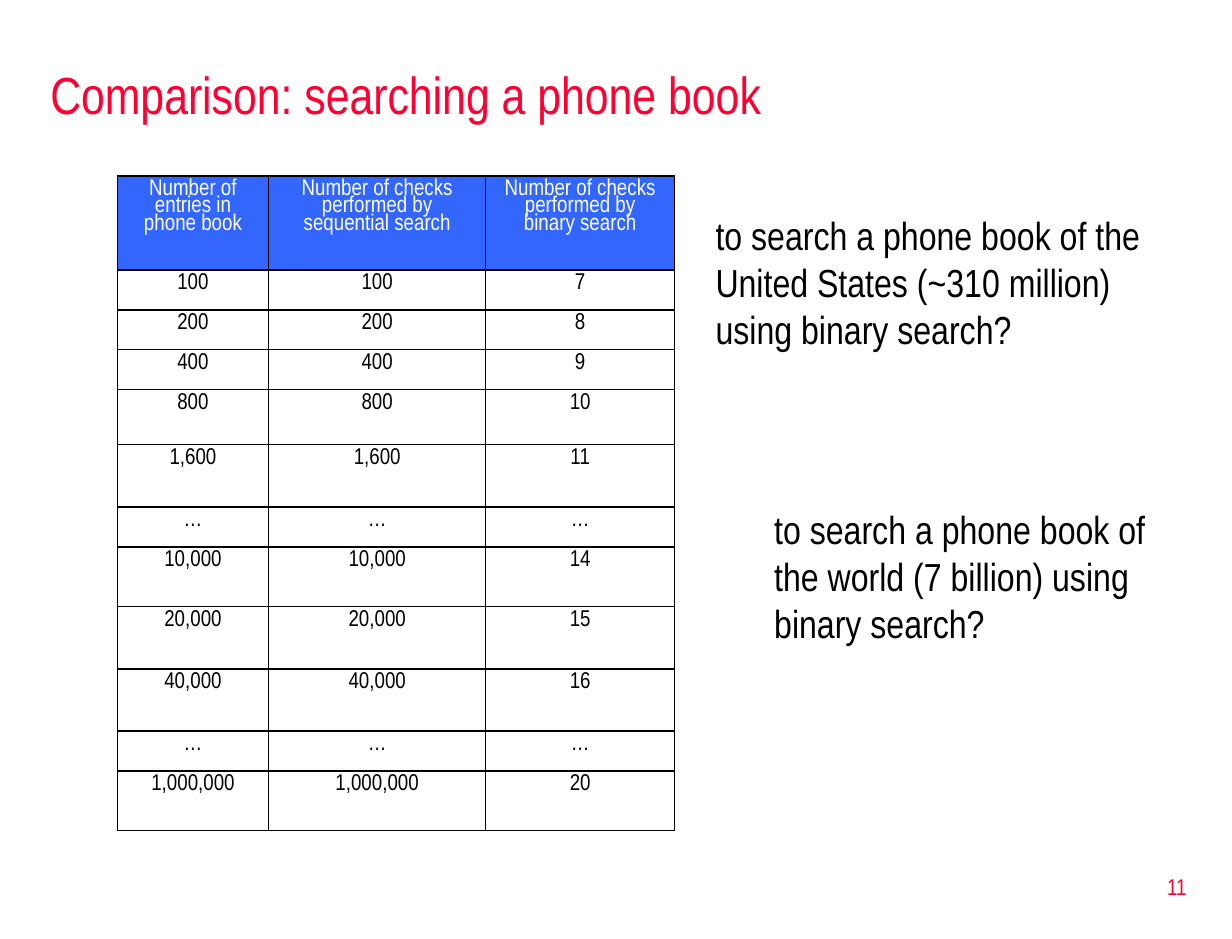
from dataclasses import dataclass
from itertools import product

from lxml.etree import SubElement
from pptx import Presentation
from pptx.dml.color import RGBColor as RGB
from pptx.enum.text import MSO_ANCHOR as Anchor, PP_ALIGN as Align
from pptx.oxml.ns import qn
from pptx.util import Inches, Pt

COLS, ROWS = 42, 32  # grid over the whole slide


@dataclass(frozen=True)
class Theme:
    font: str = "Arial Narrow"
    ink: str = "000000"
    paper: str = "FFFFFF"
    accent: str = "FF0033"
    head: str = "3366FF"
    title: int = 32
    body: int = 24
    small: int = 14
    rule: int = 1


class Deck:
    """Holds the theme and the current slide; lengths are grid columns and rows."""

    def __init__(self, theme):
        self.theme = theme
        self.prs = Presentation()
        self.prs.slide_width, self.prs.slide_height = Inches(10.5), Inches(8)
        self.slide = self.prs.slides.add_slide(self.prs.slide_layouts[6])

    def x(self, cols):
        return round(self.prs.slide_width * cols / COLS)

    def y(self, rows):
        return round(self.prs.slide_height * rows / ROWS)

    def area(self, left, top, width, height):
        return self.x(left), self.y(top), self.x(width), self.y(height)

    def label(self, para, words, size, color, **form):
        run = para.add_run()
        run.text = words
        font = {"name": self.theme.font, "size": Pt(size), "bold": False}
        for key, value in font.items():
            setattr(run.font, key, value)
        run.font.color.rgb = RGB.from_string(color)
        for key, value in form.items():
            setattr(para, key, value)

    def text(self, area, words, size, color, anchor=Anchor.MIDDLE, **form):
        frame = self.slide.shapes.add_textbox(*self.area(*area)).text_frame
        frame.word_wrap = True
        frame.vertical_anchor = anchor
        self.label(frame.paragraphs[0], words, size, color, **form)
        return frame

    def indent(self, para, cols):
        para._p.get_or_add_pPr().set("marL", str(self.x(cols)))

    def border(self, cell):
        props = cell._tc.get_or_add_tcPr()
        for place, side in enumerate(("lnL", "lnR", "lnT", "lnB")):
            line = SubElement(props, qn(f"a:{side}"), w=str(Pt(self.theme.rule)))
            fill = SubElement(line, qn("a:solidFill"))
            SubElement(fill, qn("a:srgbClr"), val=self.theme.ink)
            props.insert(place, line)  # borders come before the cell fill

    def table(self, left, top, widths, heights, data):
        look = self.theme
        area = self.area(left, top, sum(widths), sum(heights))
        table = self.slide.shapes.add_table(len(data), len(widths), *area).table
        table.first_row = table.horz_banding = False
        for col, width in zip(table.columns, widths):
            col.width = self.x(width)
        for row, height in zip(table.rows, heights):
            row.height = self.y(height)
        for r, c in product(range(len(data)), range(len(widths))):
            cell = table.cell(r, c)
            if r == 0:
                cell.fill.solid()
                cell.fill.fore_color.rgb = RGB.from_string(look.head)
            else:
                cell.fill.background()
            self.border(cell)
            self.label(cell.text_frame.paragraphs[0], data[r][c], look.small,
                       look.ink if r else look.paper,
                       alignment=Align.CENTER, line_spacing=0.8)


HEAD = ("Number of entries in phone book",
        "Number of checks performed by sequential search",
        "Number of checks performed by binary search")
# entries (also the sequential checks), binary checks, row height
LOW, MID, TALL = 1.36, 2.04, 2.12
CHECKS = [
    ("100", "7", LOW), ("200", "8", LOW), ("400", "9", LOW),
    ("800", "10", 1.88), ("1,600", "11", TALL), ("…", "…", LOW),
    ("10,000", "14", MID), ("20,000", "15", TALL), ("40,000", "16", TALL),
    ("…", "…", LOW), ("1,000,000", "20", MID),
]


def main():
    look = Theme()
    deck = Deck(look)
    deck.text((1.32, 1.68, 39.68, 3), "Comparison: searching a phone book",
              look.title, look.accent)
    deck.table(4, 6, (5.16, 7.4, 6.44), [3.2] + [row[2] for row in CHECKS],
               [HEAD] + [(size, size, found) for size, found, _ in CHECKS])
    asks = deck.text(
        (24, 7, 16.68, 18.16),
        "to search a phone book of the United States (~310 million) using binary search?",
        look.body, look.ink, Anchor.TOP)
    world = asks.add_paragraph()
    deck.label(world,
               "to search a phone book of the world (7 billion) using binary search?",
               look.body, look.ink, space_before=Pt(94))
    deck.indent(world, 2)
    deck.text((32.08, 29.16, 8.76, 2.12), "11", look.small, look.accent,
              alignment=Align.RIGHT)
    deck.prs.save("out.pptx")


if __name__ == "__main__":
    main()
